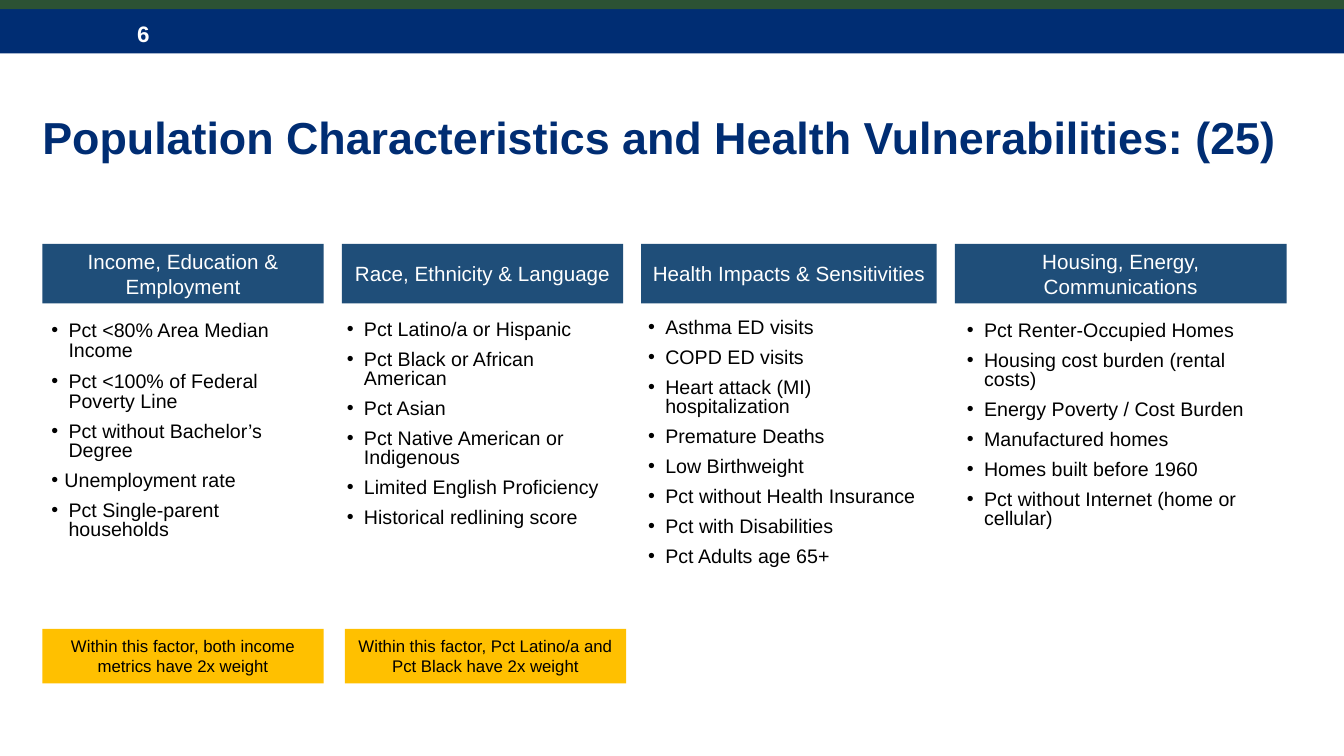
from dataclasses import dataclass

from lxml import etree
from pptx import Presentation
from pptx.dml.color import RGBColor
from pptx.enum.shapes import MSO_SHAPE
from pptx.enum.text import MSO_ANCHOR, PP_ALIGN
from pptx.oxml.ns import qn
from pptx.util import Inches, Pt

RECT = MSO_SHAPE.RECTANGLE
TOP, MIDDLE = MSO_ANCHOR.TOP, MSO_ANCHOR.MIDDLE
LEFT, CENTER = PP_ALIGN.LEFT, PP_ALIGN.CENTER


@dataclass(frozen=True)
class Theme:
    font: str = "Arial"
    navy: str = "002D73"
    green: str = "2C5234"
    blue: str = "1F4E79"
    gold: str = "FFC000"
    white: str = "FFFFFF"
    black: str = "000000"
    title: float = 32
    page: float = 16
    head: float = 14.7
    body: float = 14
    note: float = 12


@dataclass(frozen=True)
class Column:
    head: str
    width: float
    shift: float  # list box, relative to the heading
    span: float   # width of the list box
    items: tuple
    loose: int = 0  # leading items with wider line spacing
    pad: tuple = (0.13, 0.07)
    note: str = ""
    nudge: float = 0  # note, relative to the heading


THEME = Theme()
WIDE, HIGH = 13.33, 7.5
MARGIN, GAP = 0.42, 0.18
STRIPE, BAND = 0.09, 0.44
HEAD_Y, HEAD_H = 2.42, 0.59
LIST_Y, LIST_H = 3.12, 2.9
NOTE_Y, NOTE_W, NOTE_H = 6.24, 2.79, 0.54
HANG, SHORT = 0.17, 0.13
NARROW = "Unemployment rate"  # the one item with a shorter indent

COLUMNS = (
    Column("Income, Education & Employment", 2.79, -0.04, 2.9,
           ("Pct <80% Area Median Income",
            "Pct <100% of Federal Poverty Line",
            "Pct without Bachelor’s Degree",
            NARROW,
            "Pct Single-parent households"),
           loose=2,
           note="Within this factor, both income metrics have 2x weight"),
    Column("Race, Ethnicity & Language", 2.79, -0.08, 2.96,
           ("Pct Latino/a or Hispanic",
            "Pct Black or African American",
            "Pct Asian",
            "Pct Native American or Indigenous",
            "Limited English Proficiency",
            "Historical redlining score"),
           note="Within this factor, Pct Latino/a and Pct Black have 2x weight",
           nudge=0.03),
    Column("Health Impacts & Sensitivities", 2.93, -0.03, 2.98,
           ("Asthma ED visits",
            "COPD ED visits",
            "Heart attack (MI) hospitalization",
            "Premature Deaths",
            "Low Birthweight",
            "Pct without Health Insurance",
            "Pct with Disabilities",
            "Pct Adults age 65+"),
           pad=(0.1, 0.05)),
    Column("Housing, Energy, Communications", 3.29, -0.01, 3.29,
           ("Pct Renter-Occupied Homes",
            "Housing cost burden (rental costs)",
            "Energy Poverty / Cost Burden",
            "Manufactured homes",
            "Homes built before 1960",
            "Pct without Internet (home or cellular)"),
           loose=1),
)


def style(para, size, color, bold=False):
    font = para.font
    font.name, font.size, font.bold = THEME.font, Pt(size), bold
    font.color.rgb = RGBColor.from_string(color)


def setup(frame, pad, anchor):
    frame.word_wrap = True
    frame.vertical_anchor = anchor
    frame.margin_left = frame.margin_right = Inches(pad[0])
    frame.margin_top = frame.margin_bottom = Inches(pad[1])


def block(slide, box, fill):
    shape = slide.shapes.add_shape(RECT, *map(Inches, box))
    shape.shadow.inherit = False
    shape.fill.solid()
    shape.fill.fore_color.rgb = RGBColor.from_string(fill)
    shape.line.fill.background()
    return shape


def label(shape, text, size, color, pad=(0.1, 0.05), anchor=MIDDLE,
          align=CENTER, bold=False):
    frame = shape.text_frame
    setup(frame, pad, anchor)
    para = frame.paragraphs[0]
    para.text, para.alignment = text, align
    style(para, size, color, bold)
    return frame


def bullet(para, hang):
    props = para._p.get_or_add_pPr()
    props.set("marL", str(Inches(hang)))
    props.set("indent", str(-Inches(hang)))
    etree.SubElement(props, qn("a:buFont")).set("typeface", THEME.font)
    etree.SubElement(props, qn("a:buChar")).set("char", "•")


def banner(slide, box, page):
    x, y, w, h = box
    band = block(slide, (x, y + STRIPE, w, h - STRIPE), THEME.navy)
    frame = label(band, page, THEME.page, THEME.white, align=LEFT, bold=True)
    frame.margin_left = Inches(1.36)
    frame.margin_top, frame.margin_bottom = Inches(0.12), Inches(0.08)
    block(slide, (x, y, w, STRIPE), THEME.green)


def title(slide, box, text):
    shape = slide.shapes.add_textbox(*map(Inches, box))
    frame = label(shape, text, THEME.title, THEME.navy, pad=(0, 0),
                  align=LEFT, bold=True)
    frame.paragraphs[0].line_spacing = 0.9


def points(slide, box, col):
    frame = slide.shapes.add_textbox(*map(Inches, box)).text_frame
    setup(frame, col.pad, TOP)
    for i, item in enumerate(col.items):
        para = frame.paragraphs[0] if i == 0 else frame.add_paragraph()
        para.text = item
        para.line_spacing = 0.85 if i < col.loose else 0.8
        para.space_after = Pt(8)
        bullet(para, SHORT if item == NARROW else HANG)
        style(para, THEME.body, THEME.black)


def column(slide, x, col):
    head = block(slide, (x, HEAD_Y, col.width, HEAD_H), THEME.blue)
    label(head, col.head, THEME.head, THEME.white)
    points(slide, (x + col.shift, LIST_Y, col.span, LIST_H), col)
    if col.note:
        note = block(slide, (x + col.nudge, NOTE_Y, NOTE_W, NOTE_H), THEME.gold)
        label(note, col.note, THEME.note, THEME.black, pad=(0.13, 0.07),
              anchor=TOP)


def main():
    deck = Presentation()
    deck.slide_width, deck.slide_height = Inches(WIDE), Inches(HIGH)
    slide = deck.slides.add_slide(deck.slide_layouts[6])
    banner(slide, (0, 0, WIDE, STRIPE + BAND), "6")
    title(slide, (MARGIN, 0.72, 12.52, 1.34),
          "Population Characteristics and Health Vulnerabilities: (25)")
    x = MARGIN
    for col in COLUMNS:
        column(slide, x, col)
        x += col.width + GAP
    deck.save("out.pptx")


if __name__ == "__main__":
    main()
